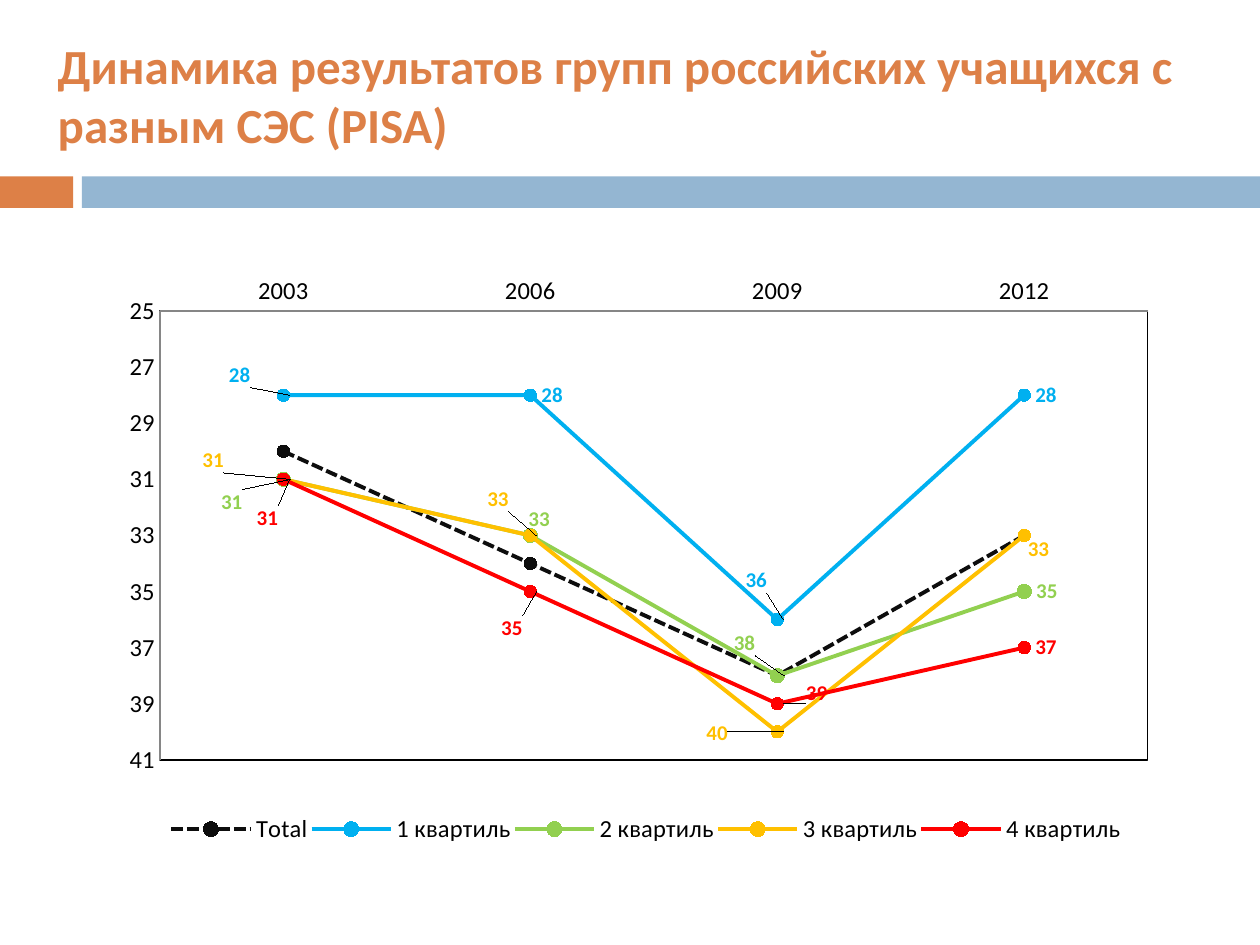
from lxml import etree
from pptx import Presentation
from pptx.chart.data import CategoryChartData
from pptx.dml.color import RGBColor
from pptx.enum.chart import XL_CHART_TYPE as ChartType
from pptx.enum.chart import XL_LABEL_POSITION as LabelPosition
from pptx.enum.chart import XL_LEGEND_POSITION as LegendPosition
from pptx.enum.chart import XL_MARKER_STYLE as MarkerStyle
from pptx.enum.chart import XL_TICK_MARK as TickMark
from pptx.enum.dml import MSO_LINE_DASH_STYLE as Dash
from pptx.enum.shapes import MSO_SHAPE as Shape
from pptx.enum.text import MSO_ANCHOR as Anchor
from pptx.oxml import parse_xml
from pptx.oxml.ns import nsdecls, qn
from pptx.util import Inches, Pt

FONT = "Calibri"
COLORS = {
    "accent": "DD8047", "band": "94B6D2", "text": "000000", "axis": "868686",
    "Total": "0D0D0D", "1 квартиль": "00B0F0", "2 квартиль": "92D050",
    "3 квартиль": "FFC000", "4 квартиль": "FF0000",
}
YEARS = ["2003", "2006", "2009", "2012"]
RESULTS = {
    "Total": [30, 34, 38, 33],
    "1 квартиль": [28, 28, 36, 28],
    "2 квартиль": [31, 33, 38, 35],
    "3 квартиль": [31, 33, 40, 33],
    "4 квартиль": [31, 35, 39, 37],
}
LABEL_SHIFTS = {
    "1 квартиль": {0: (-0.52, -0.16), 2: (-0.34, -0.31)},
    "2 квартиль": {0: (-0.59, 0.18), 1: (-0.11, -0.13), 2: (-0.44, -0.26)},
    "3 квартиль": {0: (-0.73, -0.15), 1: (-0.43, -0.29), 2: (-0.65, 0.01), 3: (-0.06, 0.11)},
    "4 квартиль": {0: (-0.3, 0.31), 1: (-0.32, 0.29), 2: (0.14, -0.08)},
}
CHART_WIDTH, CHART_HEIGHT = 8.35, 5.04


def rgb(name):
    return RGBColor.from_string(COLORS[name])


def style_font(font, size, color, bold=False):
    font.name, font.size, font.bold = FONT, Pt(size), bold
    font.color.rgb = rgb(color)


def add_bar(page, left, width, color):
    bar = page.shapes.add_shape(Shape.RECTANGLE, Inches(left), Inches(1.4), Inches(width), Inches(0.25))
    bar.shadow.inherit = False
    bar.fill.solid()
    bar.fill.fore_color.rgb = rgb(color)
    bar.line.fill.background()


def add_title(page, text):
    box = page.shapes.add_textbox(Inches(0.36), Inches(0.25), Inches(9.29), Inches(1))
    frame = box.text_frame
    frame.word_wrap = True
    frame.vertical_anchor = Anchor.MIDDLE
    frame.text = text
    style_font(frame.paragraphs[0].runs[0].font, 28, "accent", True)


def set_layout(parent, index, **values):
    for old in parent.findall(qn("c:layout")):
        parent.remove(old)
    layout = parse_xml(f"<c:layout {nsdecls('c')}><c:manualLayout/></c:layout>")
    for tag, value in values.items():
        etree.SubElement(layout[0], qn(f"c:{tag}")).set("val", str(value))
    parent.insert(index, layout)


def style_series(series):
    color = rgb(series.name)
    series.smooth = False
    series.format.line.width = Pt(2.25)
    series.format.line.color.rgb = color
    if series.name == "Total":
        series.format.line.dash_style = Dash.SQUARE_DOT
    marker = series.marker
    marker.style = MarkerStyle.CIRCLE
    marker.size = 8 if series.name == "2 квартиль" else 7
    marker.format.fill.solid()
    marker.format.fill.fore_color.rgb = color
    marker.format.line.color.rgb = color


def label_series(series):
    labels = series.data_labels
    labels.show_value = True
    labels.position = LabelPosition.RIGHT
    style_font(labels.font, 12, series.name, True)
    for index, (right, down) in LABEL_SHIFTS[series.name].items():
        label = series.points[index].data_label
        label.position = LabelPosition.RIGHT
        style_font(label.font, 12, series.name, True)
        element = series._element.xpath(f"c:dLbls/c:dLbl[c:idx/@val={index}]")[0]
        set_layout(element, 1, x=right / CHART_WIDTH, y=down / CHART_HEIGHT)


def style_axis(axis):
    axis.has_major_gridlines = False
    axis.major_tick_mark = axis.minor_tick_mark = TickMark.NONE
    axis.format.line.color.rgb = rgb("axis")
    style_font(axis.tick_labels.font, 14, "text")


def style_plot(chart):
    area = chart._chartSpace.chart.plotArea
    set_layout(area, 0, layoutTarget="inner", xMode="edge", yMode="edge", x=0.043, y=0.089, w=0.939, h=0.707)
    area.append(parse_xml(
        f'<c:spPr {nsdecls("c", "a")}><a:noFill/><a:ln w="9525"><a:solidFill>'
        f'<a:srgbClr val="{COLORS["text"]}"/></a:solidFill></a:ln></c:spPr>'))


def add_legend(chart):
    chart.has_legend = True
    legend = chart.legend
    legend.position = LegendPosition.BOTTOM
    legend.include_in_layout = False
    style_font(legend.font, 14, "text")
    set_layout(legend._element, 1, xMode="edge", yMode="edge", x=0.05, y=0.87, w=0.91, h=0.07)


def add_results_chart(page):
    data = CategoryChartData()
    data.categories = YEARS
    for name, values in RESULTS.items():
        data.add_series(name, values)
    chart = page.shapes.add_chart(
        ChartType.LINE_MARKERS, Inches(0.91), Inches(2.02), Inches(CHART_WIDTH), Inches(CHART_HEIGHT), data).chart
    chart.has_title = False
    style_font(chart.font, 10, "text")
    for axis in (chart.category_axis, chart.value_axis):
        style_axis(axis)
    scale = chart.value_axis
    scale.minimum_scale, scale.maximum_scale, scale.major_unit = 25, 41, 2
    scale.reverse_order = True
    for series in chart.plots[0].series:
        style_series(series)
        if series.name in LABEL_SHIFTS:
            label_series(series)
    style_plot(chart)
    add_legend(chart)


def main():
    """Build the slide on PISA results by socio-economic quartile."""
    deck = Presentation()
    deck.slide_width, deck.slide_height = Inches(10), Inches(7.5)
    page = deck.slides.add_slide(deck.slide_layouts[6])
    add_bar(page, 0, 0.58, "accent")
    add_bar(page, 0.65, 9.35, "band")
    add_title(page, "Динамика результатов групп российских учащихся с разным СЭС (PISA)")
    add_results_chart(page)
    deck.save("out.pptx")


if __name__ == "__main__":
    main()
